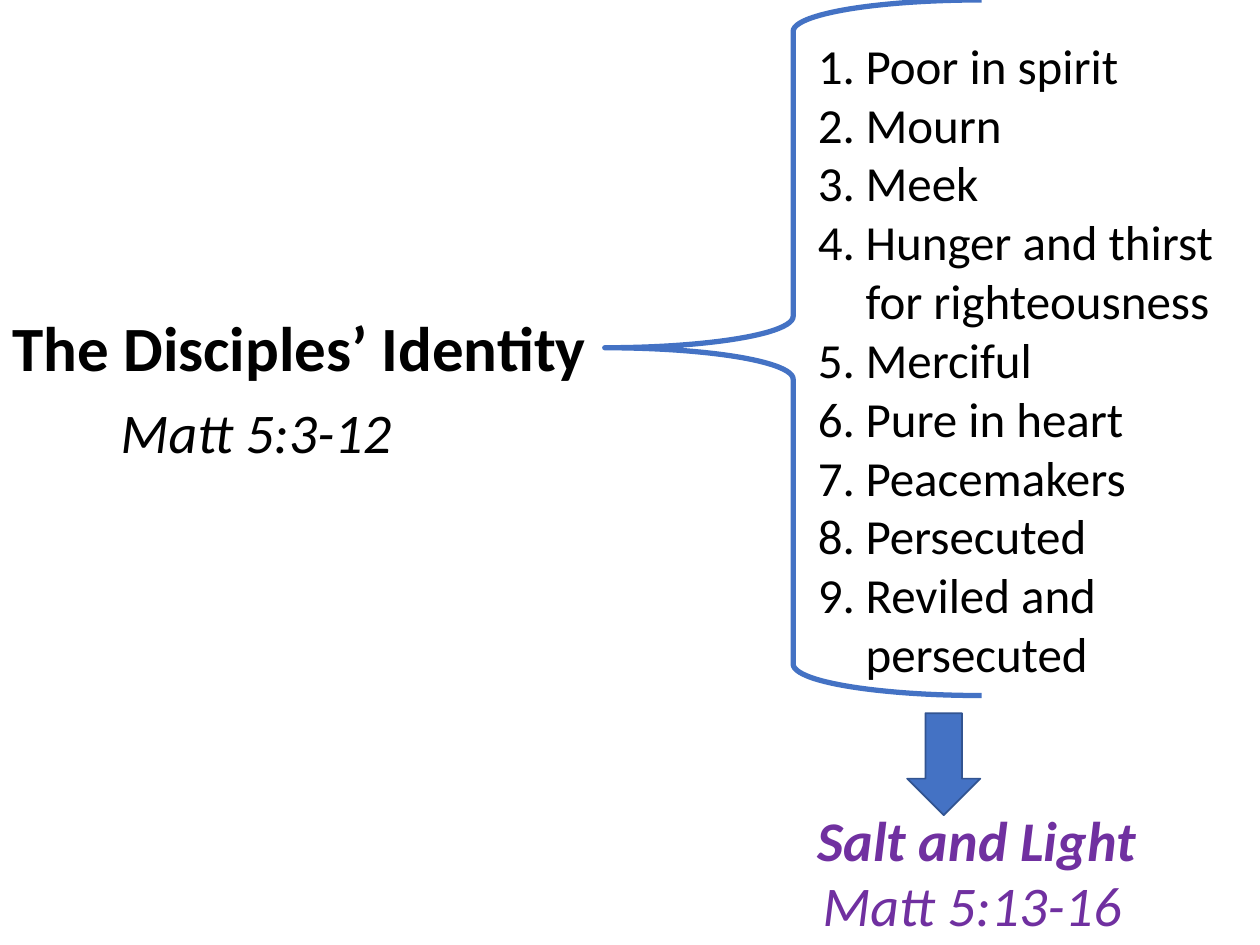
from pptx import Presentation
from pptx.dml.color import RGBColor
from pptx.enum.shapes import MSO_SHAPE
from pptx.enum.text import MSO_ANCHOR, MSO_AUTO_SIZE, PP_ALIGN
from pptx.oxml.xmlchemy import OxmlElement
from pptx.util import Inches, Pt

LEFT_BRACE, DOWN_ARROW = MSO_SHAPE.LEFT_BRACE, MSO_SHAPE.DOWN_ARROW
TOP, LEFT = MSO_ANCHOR.TOP, PP_ALIGN.LEFT
NO_AUTO_SIZE = MSO_AUTO_SIZE.NONE

FONT = "Calibri"
BLACK = RGBColor(0x00, 0x00, 0x00)
PURPLE = RGBColor(0x70, 0x30, 0xA0)
BLUE = RGBColor(0x44, 0x72, 0xC4)
DARK_BLUE = RGBColor(0x32, 0x54, 0x91)

LINE_HEIGHT = 0.64
LIST_INDENT = Inches(0.38)
BEATITUDES = [
    "Poor in spirit", "Mourn", "Meek", "Hunger and thirst for righteousness",
    "Merciful", "Pure in heart", "Peacemakers", "Persecuted",
    "Reviled and persecuted",
]


def place(shape, left, top, width, height):
    shape.left, shape.top = Inches(left), Inches(top)
    shape.width, shape.height = Inches(width), Inches(height)


def write(shape, lines, size, color=BLACK, bold=False, italic=False):
    """Fill a shape with one left-aligned paragraph per line."""
    frame = shape.text_frame
    frame.word_wrap = True
    frame.auto_size = NO_AUTO_SIZE
    frame.vertical_anchor = TOP
    for index, line in enumerate(lines):
        paragraph = frame.add_paragraph() if index else frame.paragraphs[0]
        paragraph.alignment = LEFT
        paragraph.space_before = Pt(0)
        run = paragraph.add_run()
        run.text = line
        font = run.font
        font.name, font.size = FONT, Pt(size)
        font.bold, font.italic = bold, italic
        font.color.rgb = color


def add_label(slide, box, text, **style):
    label = slide.shapes.add_textbox(*map(Inches, box))
    write(label, [text], 32, italic=True, **style)


def add_outline(slide, kind, box, color, width):
    shape = slide.shapes.add_shape(kind, *map(Inches, box))
    shape.shadow.inherit = False
    shape.line.color.rgb = color
    shape.line.width = Pt(width)
    return shape


def number(paragraph):
    properties = paragraph._p.get_or_add_pPr()
    properties.set("marL", str(LIST_INDENT))
    properties.set("indent", str(-LIST_INDENT))
    numbering = OxmlElement("a:buAutoNum")
    numbering.set("type", "arabicPeriod")
    properties.append(numbering)


def build_identity(slide, left, top, width):
    """Heading with its scripture reference below."""
    title = slide.shapes.title
    place(title, left, top, width, 0.71)
    write(title, ["The Disciples’ Identity"], 36, bold=True)
    add_label(slide, (left + 0.86, top + 0.71, 2.71, LINE_HEIGHT), "Matt 5:3-12")


def build_beatitudes(slide, left, top, width, height):
    """Brace opening onto the numbered list."""
    brace = add_outline(slide, LEFT_BRACE, (left, top, 2.99, height), BLUE, 3)
    brace.fill.background()
    body = slide.placeholders[1]
    list_left = 1.59
    place(body, left + list_left, top + 0.23, width - list_left, height - 0.23)
    write(body, BEATITUDES, 28)
    for paragraph in body.text_frame.paragraphs:
        number(paragraph)


def build_outcome(slide, left, top, width):
    """Arrow leading down to the closing words."""
    arrow = add_outline(slide, DOWN_ARROW, (left + 0.81, top, 0.58, 0.81), DARK_BLUE, 1)
    arrow.fill.solid()
    arrow.fill.fore_color.rgb = BLUE
    add_label(slide, (left, top + 0.68, width, LINE_HEIGHT), "Salt and Light",
              color=PURPLE, bold=True)
    add_label(slide, (left + 0.04, top + 1.2, 2.71, LINE_HEIGHT), "Matt 5:13-16",
              color=PURPLE)


def main():
    presentation = Presentation()
    presentation.slide_width, presentation.slide_height = Inches(10), Inches(7.5)
    slide = presentation.slides.add_slide(presentation.slide_layouts[1])
    build_identity(slide, 0, 2.4, 4.8)
    build_beatitudes(slide, 4.8, 0, 5.04, 5.52)
    build_outcome(slide, 6.39, 5.66, 3.35)
    presentation.save("out.pptx")


if __name__ == "__main__":
    main()
